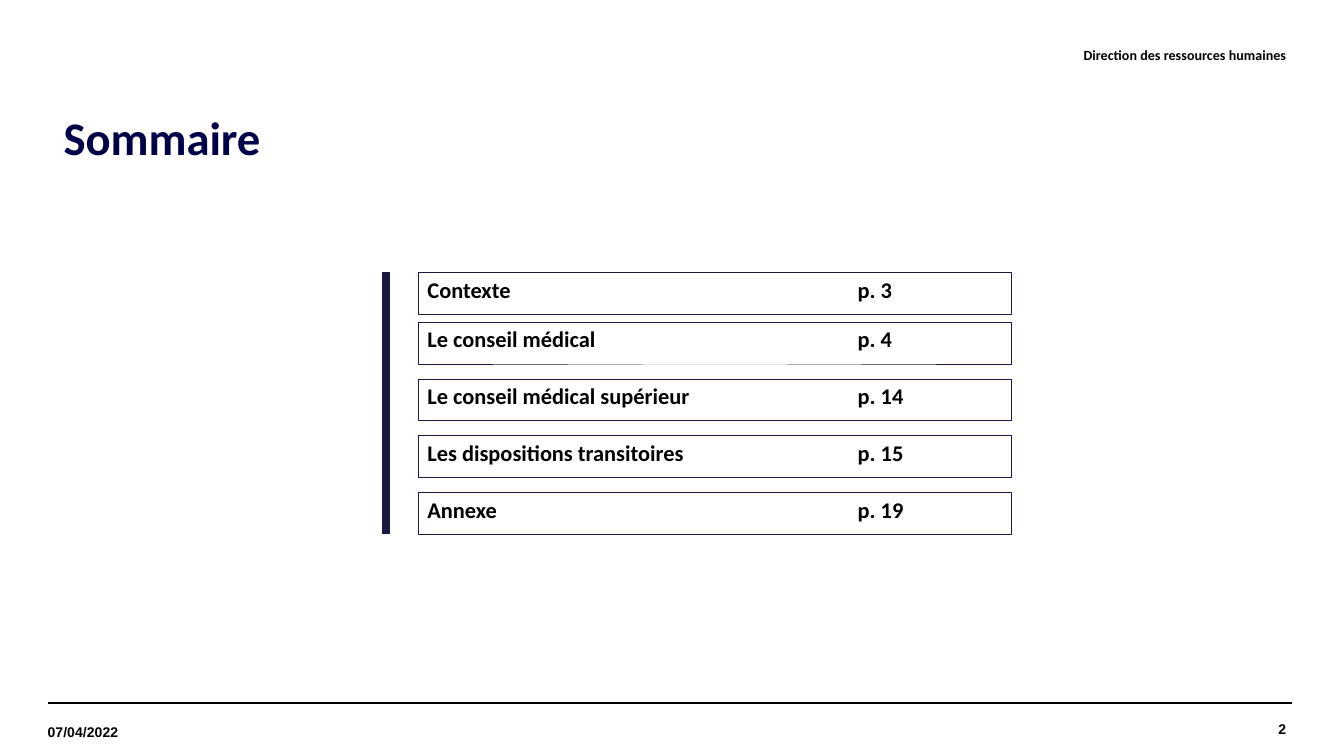
from lxml.etree import SubElement
from pptx import Presentation
from pptx.dml.color import RGBColor
from pptx.enum.shapes import MSO_CONNECTOR, MSO_SHAPE
from pptx.enum.text import MSO_ANCHOR, PP_ALIGN
from pptx.oxml.ns import qn
from pptx.util import Pt

BLACK = RGBColor(0x00, 0x00, 0x00)
TITLE_BLUE = RGBColor(0x00, 0x00, 0x48)
NAVY = RGBColor(0x19, 0x19, 0x44)

CONTENTS = [
    ("Contexte", "p. 3"),
    ("Le conseil médical", "p. 4"),
    ("Le conseil médical supérieur", "p. 14"),
    ("Les dispositions transitoires", "p. 15"),
    ("Annexe", "p. 19"),
]
ROW_HEIGHT = 22.3
FIRST_GAP = 4.3
ROW_GAP = 8.1
PAGE_TAB = 230.5


def write(shape, text, size, font="Calibri", color=BLACK, align=PP_ALIGN.LEFT,
          insets=(0, 0, 0, 0), tab=None):
    """Fill a shape with one bold line; insets are left, top, right, bottom."""
    frame = shape.text_frame
    frame.word_wrap = True
    frame.vertical_anchor = MSO_ANCHOR.MIDDLE
    (frame.margin_left, frame.margin_top,
     frame.margin_right, frame.margin_bottom) = map(Pt, insets)
    paragraph = frame.paragraphs[0]
    paragraph.alignment = align
    if tab:
        tabs = SubElement(paragraph._p.get_or_add_pPr(), qn("a:tabLst"))
        SubElement(tabs, qn("a:tab"), pos=str(Pt(tab)), algn="l")
    run = paragraph.add_run()
    run.text = text
    run.font.name = font
    run.font.size = Pt(size)
    run.font.bold = True
    run.font.color.rgb = color
    return paragraph


def add_text(slide, box, text, size, **style):
    return write(slide.shapes.add_textbox(*map(Pt, box)), text, size, **style)


def add_rule(slide, start, end, color, width):
    rule = slide.shapes.add_connector(MSO_CONNECTOR.STRAIGHT, *map(Pt, start + end))
    rule.line.color.rgb = color
    rule.line.width = Pt(width)
    SubElement(rule._element.spPr, qn("a:effectLst"))


def add_header(slide, left, top, width, height):
    add_text(slide, (left + width - 130.3, top, 130.3, 28),
             "Direction des ressources humaines", 7.5, align=PP_ALIGN.RIGHT)
    title = add_text(slide, (left, top + height - 42.5, width, 42.5),
                     "Sommaire", 25, color=TITLE_BLUE, insets=(8.6, 3.6, 7.2, 3.6))
    title.line_spacing = 0.9


def add_contents(slide, left, top, width):
    """Draw the framed entries, with the vertical bar to their left."""
    row_top = top
    for index, (heading, page) in enumerate(CONTENTS):
        if index:
            row_top += ROW_HEIGHT + (FIRST_GAP if index == 1 else ROW_GAP)
        entry = slide.shapes.add_shape(
            MSO_SHAPE.RECTANGLE, Pt(left), Pt(row_top), Pt(width), Pt(ROW_HEIGHT))
        entry.shadow.inherit = False
        entry.fill.background()
        entry.line.color.rgb = NAVY
        entry.line.width = Pt(0.25)
        write(entry, f"{heading}\t{page}", 12, insets=(5, 0, 5, 4.3), tab=PAGE_TAB)
    bar_x = left - 17.3
    add_rule(slide, (bar_x, top), (bar_x, row_top + ROW_HEIGHT), NAVY, 4.5)


def add_footer(slide, left, top, width, height):
    for shift in (0, 2.9):
        add_rule(slide, (left + shift, top), (left + width + shift, top), BLACK, 0.8)
    add_text(slide, (left, top + 1.4, 95, height), "07/04/2022", 7.5, font="Arial")
    add_text(slide, (left + width - 106.6, top, 106.6, height), "2", 7.5,
             font="Arial", align=PP_ALIGN.RIGHT)


def main():
    presentation = Presentation()
    presentation.slide_width = Pt(720)
    presentation.slide_height = Pt(405)
    slide = presentation.slides.add_slide(presentation.slide_layouts[6])
    add_header(slide, 25.5, 15.4, 663.5, 81.1)
    add_contents(slide, 224, 146, 317.5)
    add_footer(slide, 25.5, 376.6, 663.5, 28)
    presentation.save("out.pptx")


if __name__ == "__main__":
    main()
